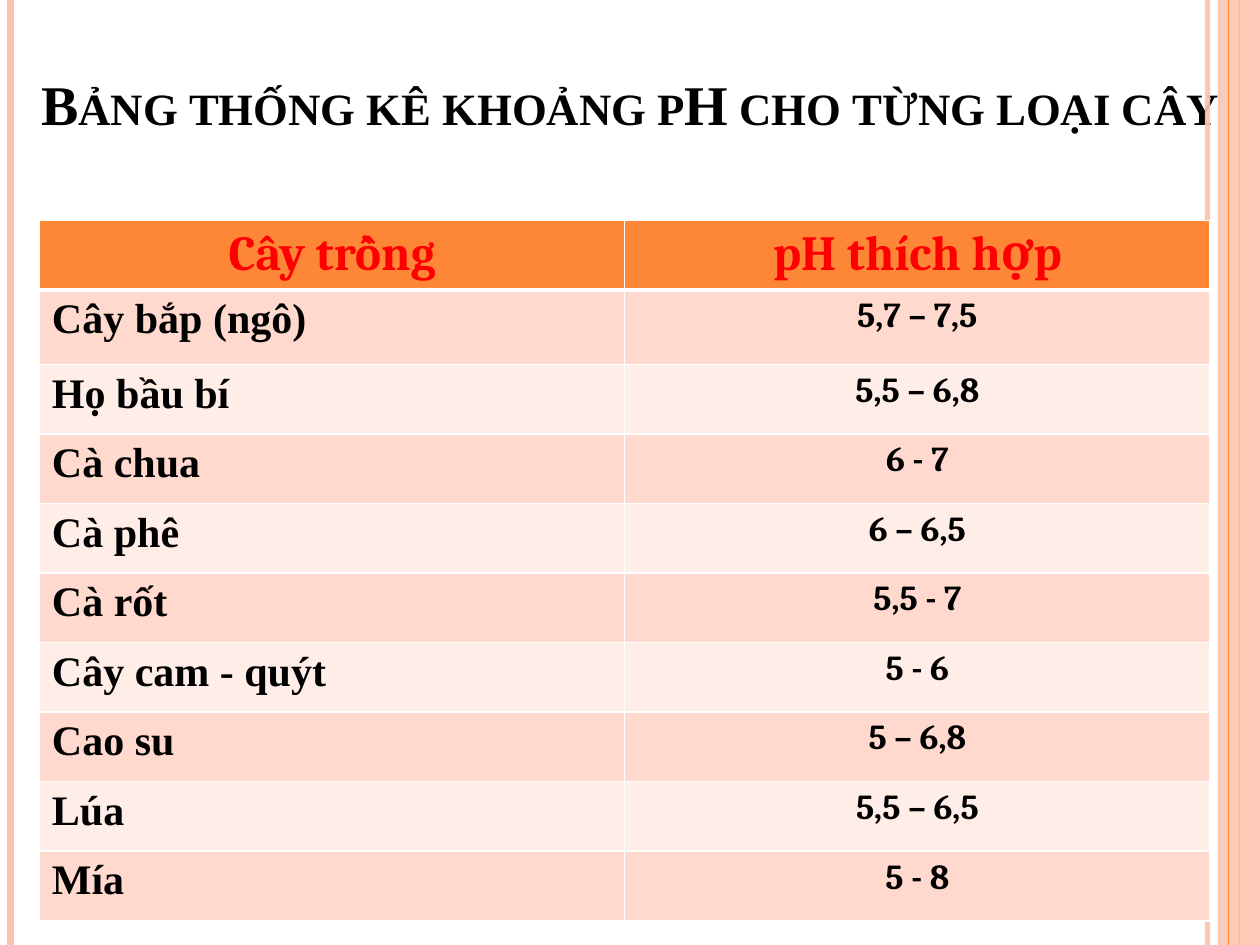
import pptx
import pptx.util
import pptx.dml.color
import pptx.enum.shapes
import pptx.enum.text
import pptx.oxml.ns
import lxml.etree

Pt = pptx.util.Pt
qn = pptx.oxml.ns.qn
ALIGN = pptx.enum.text.PP_ALIGN
MIDDLE = pptx.enum.text.MSO_ANCHOR.MIDDLE

TITLE = "Bảng thống kê khoảng pH cho từng loại cây"
HEADINGS = ("Cây trồng", "pH thích hợp")
CROPS = [
    ("Cây bắp (ngô)", "5,7 – 7,5"),
    ("Họ bầu bí", "5,5 – 6,8"),
    ("Cà chua", "6 - 7"),
    ("Cà phê", "6 – 6,5"),
    ("Cà rốt", "5,5 - 7"),
    ("Cây cam - quýt", "5 - 6"),
    ("Cao su", "5 – 6,8"),
    ("Lúa", "5,5 – 6,5"),
    ("Mía", "5 - 8"),
]
WIDTH, HEIGHT = 720, 540
ORANGE, PEACH, WHITE, BLACK, RED = "FE8637", "FEC3AE", "FFFFFF", "000000", "FF0000"
BANDS = ("FFD9CE", "FFEDE8")
LINES_BEHIND = [(690, PEACH, 3, 93), (6, PEACH, 4.5, 100), (708, ORANGE, 1.5, 100)]
LINES_FRONT = [(702, ORANGE, 0.75, 100)]
STRIP_LEFT, STRIP_OPACITY = 696, 87
TABLE_LEFT, TABLE_TOP, COLUMN_WIDTH = 22.5, 126, 334.5
ROW_HEIGHT, FIRST_CROP_HEIGHT = 39.75, 42.5


def colour(value):
    return pptx.dml.color.RGBColor.from_string(value)


def paint(fill, value):
    fill.solid()
    fill.fore_color.rgb = colour(value)


def set_opacity(element, percent):
    for tint in element.spPr.iter(qn("a:srgbClr")):
        lxml.etree.SubElement(tint, qn("a:alpha"), val=str(percent * 1000))


def format_text(frame, font, size, value, alignment):
    paragraph = frame.paragraphs[0]
    paragraph.alignment = alignment
    span = paragraph.runs[0]
    span.font.name = font
    span.font.size = Pt(size)
    span.font.bold = True
    span.font.color.rgb = colour(value)
    return span


def add_vertical_lines(page, lines):
    for left, value, weight, opacity in lines:
        line = page.shapes.add_connector(
            pptx.enum.shapes.MSO_CONNECTOR.STRAIGHT, Pt(left), 0, Pt(left), Pt(HEIGHT))
        line.line.width = Pt(weight)
        paint(line.line.fill, value)
        if opacity < 100:
            set_opacity(line.element, opacity)
        lxml.etree.SubElement(line.element.spPr, qn("a:effectLst"))


def add_strip(page):
    strip = page.shapes.add_shape(
        pptx.enum.shapes.MSO_SHAPE.RECTANGLE,
        Pt(STRIP_LEFT), 0, Pt(WIDTH - STRIP_LEFT), Pt(HEIGHT))
    strip.shadow.inherit = False
    paint(strip.fill, PEACH)
    set_opacity(strip.element, STRIP_OPACITY)
    strip.line.fill.background()


def add_title(page):
    title = page.shapes.title
    title.left, title.top, title.width, title.height = 0, Pt(34), Pt(WIDTH), Pt(50)
    frame = title.text_frame
    frame.text = TITLE
    frame.word_wrap = True
    frame.auto_size = pptx.enum.text.MSO_AUTO_SIZE.NONE
    frame.vertical_anchor = MIDDLE
    span = format_text(frame, "Times New Roman", 32, BLACK, ALIGN.CENTER)
    span.font._element.set("cap", "small")


def set_borders(cell, bottom):
    properties = cell._tc.get_or_add_tcPr()
    for side, weight in (("L", 1), ("R", 1), ("T", 1), ("B", bottom)):
        border = lxml.etree.SubElement(properties, qn("a:ln" + side), w=str(Pt(weight)))
        fill = lxml.etree.SubElement(border, qn("a:solidFill"))
        lxml.etree.SubElement(fill, qn("a:srgbClr"), val=WHITE)


def add_crop_table(page):
    rows = [HEADINGS] + CROPS
    heights = [ROW_HEIGHT, FIRST_CROP_HEIGHT] + [ROW_HEIGHT] * (len(CROPS) - 1)
    table = page.shapes.add_table(
        len(rows), len(HEADINGS), Pt(TABLE_LEFT), Pt(TABLE_TOP),
        Pt(COLUMN_WIDTH * len(HEADINGS)), Pt(sum(heights))).table
    for column in table.columns:
        column.width = Pt(COLUMN_WIDTH)
    for number, (texts, height) in enumerate(zip(rows, heights)):
        table.rows[number].height = Pt(height)
        styles = [("Times New Roman", 24, BLACK, ALIGN.LEFT),
                  ("Cambria", 20, BLACK, ALIGN.CENTER)]
        fill, bottom = BANDS[(number - 1) % 2], 1
        if number == 0:
            styles = [("Cambria", 28, RED, ALIGN.CENTER)] * 2
            fill, bottom = ORANGE, 3
        for cell, text, style in zip(table.rows[number].cells, texts, styles):
            cell.text_frame.text = text
            format_text(cell.text_frame, *style)
            set_borders(cell, bottom)
            if number == 1:
                cell._tc.tcPr.find(qn("a:lnT")).set("w", str(Pt(3)))
            paint(cell.fill, fill)


def main():
    deck = pptx.Presentation()
    deck.slide_width, deck.slide_height = Pt(WIDTH), Pt(HEIGHT)
    page = deck.slides.add_slide(deck.slide_layouts[5])
    paint(page.background.fill, WHITE)
    add_vertical_lines(page, LINES_BEHIND)
    add_strip(page)
    add_vertical_lines(page, LINES_FRONT)
    add_title(page)
    add_crop_table(page)
    deck.save("out.pptx")


if __name__ == "__main__":
    main()
